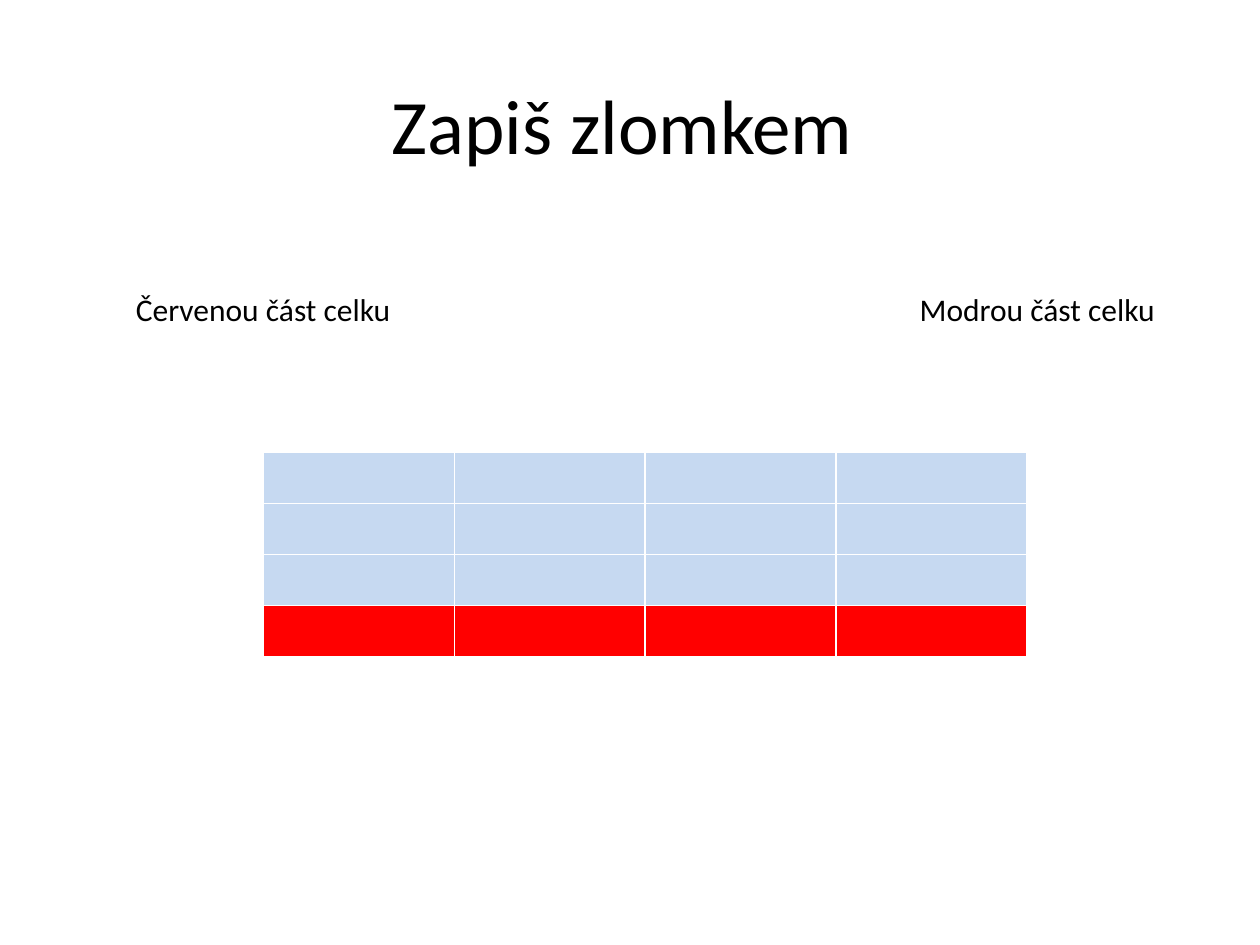
import dataclasses

import pptx
import pptx.dml.color
import pptx.enum.text
import pptx.slide
import pptx.text.text
import pptx.util

BLACK = pptx.dml.color.RGBColor(0x00, 0x00, 0x00)
LIGHT_BLUE = pptx.dml.color.RGBColor(0xC6, 0xD9, 0xF1)
RED = pptx.dml.color.RGBColor(0xFF, 0x00, 0x00)

COLUMNS = 4
ROW_FILLS = [LIGHT_BLUE] * 3 + [RED]
COLUMN_WIDTH = pptx.util.Inches(1.515)
ROW_HEIGHT = pptx.util.Inches(0.405)


@dataclasses.dataclass
class Label:
    text: str
    left: float
    width: float


LABELS = [
    Label("Červenou část celku", 0.98, 2.25),
    Label("Modrou část celku", 7.2, 2.09),
]


def write(tf: pptx.text.text.TextFrame, text: str, size: int,
          align: pptx.enum.text.PP_ALIGN) -> None:
    p = tf.paragraphs[0]
    p.alignment = align
    r = p.add_run()
    r.text = text
    formats = {"name": "Calibri", "size": pptx.util.Pt(size)}
    for name, value in formats.items():
        setattr(r.font, name, value)
    r.font.color.rgb = BLACK


def add_title(s: pptx.slide.Slide, text: str) -> None:
    sp = s.shapes.title
    box = {"left": 0.51, "top": 0.36, "width": 9, "height": 1.25}
    for name, value in box.items():
        setattr(sp, name, pptx.util.Inches(value))
    sp.text_frame.vertical_anchor = pptx.enum.text.MSO_ANCHOR.MIDDLE
    write(sp.text_frame, text, 44, pptx.enum.text.PP_ALIGN.CENTER)


def add_fraction_table(s: pptx.slide.Slide) -> None:
    # The default table style supplies the white cell borders
    table = s.shapes.add_table(
        len(ROW_FILLS), COLUMNS, pptx.util.Inches(2.09), pptx.util.Inches(3.59),
        COLUMN_WIDTH * COLUMNS, ROW_HEIGHT * len(ROW_FILLS)).table
    table.horz_banding = False
    for row, color in zip(table.rows, ROW_FILLS):
        for cell in row.cells:
            cell.fill.solid()
            cell.fill.fore_color.rgb = color


def add_label(s: pptx.slide.Slide, label: Label) -> None:
    sp = s.shapes.add_textbox(
        pptx.util.Inches(label.left), pptx.util.Inches(2.25),
        pptx.util.Inches(label.width), pptx.util.Inches(0.4))
    tf = sp.text_frame
    formats = {"word_wrap": False,
               "auto_size": pptx.enum.text.MSO_AUTO_SIZE.SHAPE_TO_FIT_TEXT}
    for name, value in formats.items():
        setattr(tf, name, value)
    write(tf, label.text, 18, pptx.enum.text.PP_ALIGN.LEFT)


def main() -> None:
    prs = pptx.Presentation()
    prs.slide_width = pptx.util.Inches(10)
    prs.slide_height = pptx.util.Inches(7.5)
    # Title Only layout
    s = prs.slides.add_slide(prs.slide_layouts[5])
    add_title(s, "Zapiš zlomkem ")
    add_fraction_table(s)
    for label in LABELS:
        add_label(s, label)
    prs.save("out.pptx")


if __name__ == "__main__":
    main()
